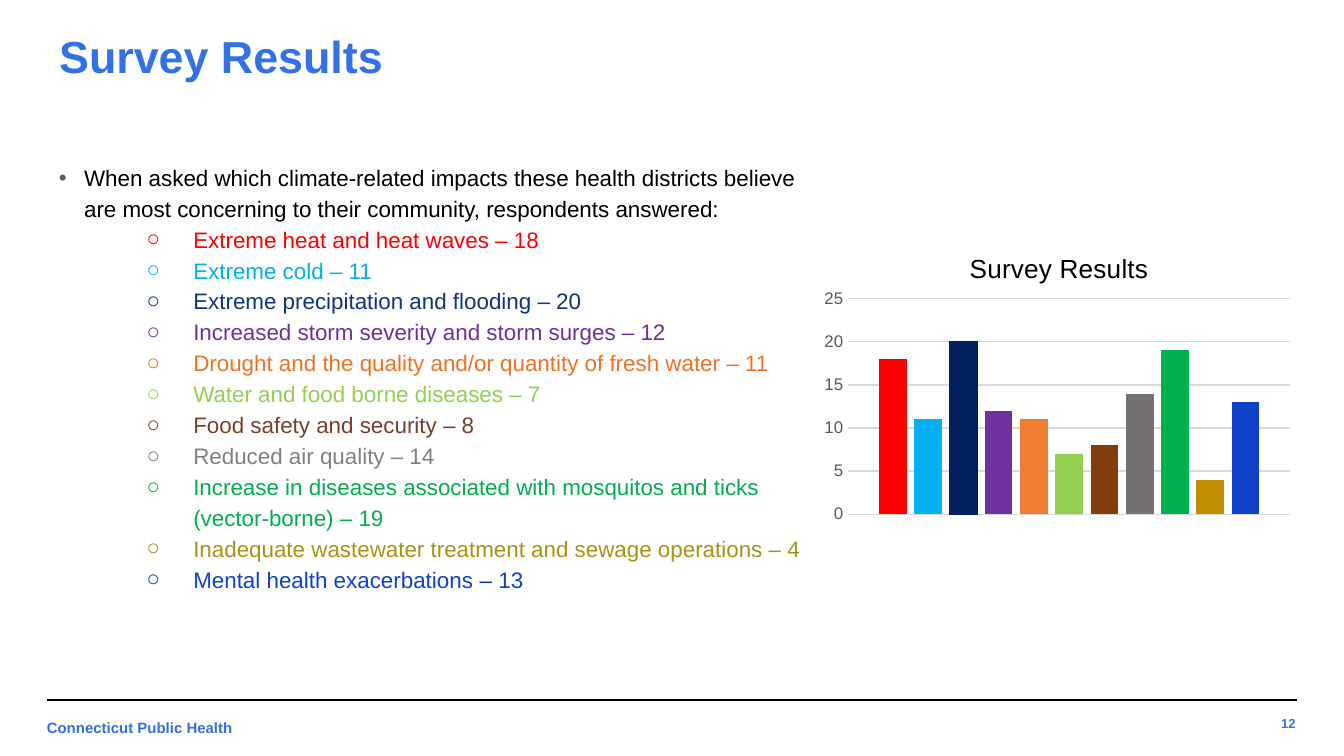
from dataclasses import dataclass

from lxml import etree
from pptx import Presentation
from pptx.chart.data import CategoryChartData
from pptx.dml.color import RGBColor
from pptx.enum.chart import XL_CHART_TYPE, XL_TICK_MARK
from pptx.enum.shapes import MSO_CONNECTOR
from pptx.enum.text import MSO_ANCHOR, MSO_AUTO_SIZE, PP_ALIGN
from pptx.oxml.ns import qn
from pptx.util import Pt

COLUMNS = XL_CHART_TYPE.COLUMN_CLUSTERED
NO_TICKS = XL_TICK_MARK.NONE
STRAIGHT = MSO_CONNECTOR.STRAIGHT
TOP, MIDDLE = MSO_ANCHOR.TOP, MSO_ANCHOR.MIDDLE
LEFT, RIGHT = PP_ALIGN.LEFT, PP_ALIGN.RIGHT
TITLE_ONLY_LAYOUT = 5

FONT = "Arial"
BLUE, BLACK, GRAY, GRID_GRAY = "3371E7", "000000", "595959", "D9D9D9"
INSET = 7.2


@dataclass
class Box:
    left: float
    top: float
    width: float
    height: float

    def lengths(self) -> tuple:
        return Pt(self.left), Pt(self.top), Pt(self.width), Pt(self.height)


@dataclass
class Impact:
    label: str
    count: int
    text_color: str
    bar_color: str
    dash_color: str = ""
    space: str = " "
    outlined: bool = False

    def runs(self) -> list:
        return [
            (self.label + self.space, self.text_color),
            ("– ", self.dash_color or self.text_color),
            (str(self.count), self.text_color),
        ]


QUESTION = (
    "When asked which climate-related impacts these health districts believe "
    "are most concerning to their community, respondents answered:"
)
IMPACTS = [
    Impact("Extreme heat and heat waves", 18, "FF0000", "FF0000"),
    Impact("Extreme cold", 11, "00B0F0", "00B0F0"),
    Impact("Extreme precipitation and flooding", 20, "0F357E", "002060", outlined=True),
    Impact("Increased storm severity and storm surges", 12, "7030A0", "7030A0"),
    Impact("Drought and the quality and/or quantity of fresh water", 11, "F17121", "ED7D31"),
    Impact("Water and food borne diseases", 7, "92D050", "92D050"),
    Impact("Food safety and security", 8, "7A3F2A", "833C0C"),
    Impact("Reduced air quality", 14, "808080", "757171"),
    Impact("Increase in diseases associated with mosquitos and ticks (vector-borne)",
           19, "00B050", "00B050", space=" "),
    Impact("Inadequate wastewater treatment and sewage operations", 4, "AD9113", "BF8F00"),
    Impact("Mental health exacerbations", 13, "0F42D2", "0E40C8",
           dash_color="003D9C", space=" "),
]


def rgb(color: str) -> RGBColor:
    return RGBColor.from_string(color)


def format_font(font, size: float, color: str, bold: bool = False) -> None:
    font.name, font.size, font.bold = FONT, Pt(size), bold
    font.color.rgb = rgb(color)


def prepare_frame(text_frame, anchor) -> None:
    text_frame.auto_size = MSO_AUTO_SIZE.NONE
    text_frame.word_wrap = True
    text_frame.vertical_anchor = anchor
    text_frame.margin_left = text_frame.margin_right = Pt(INSET)
    text_frame.margin_top = text_frame.margin_bottom = Pt(INSET)


def set_label(shape, text: str, size: float, anchor, alignment=LEFT) -> None:
    """Fill a shape with one bold blue line of text."""
    prepare_frame(shape.text_frame, anchor)
    shape.text_frame.text = text
    paragraph = shape.text_frame.paragraphs[0]
    paragraph.alignment = alignment
    format_font(paragraph.runs[0].font, size, BLUE, bold=True)


def add_bullet(paragraph, runs: list, mark: str, margin: float, hang: float,
               mark_color: str = "") -> None:
    paragraph.line_spacing = 1.15
    for text, color in runs:
        run = paragraph.add_run()
        run.text = text
        format_font(run.font, 12, color)
    properties = paragraph._p.get_or_add_pPr()
    properties.set("marL", str(Pt(margin)))
    properties.set("indent", str(-Pt(hang)))
    if mark_color:
        bullet_color = etree.SubElement(properties, qn("a:buClr"))
        etree.SubElement(bullet_color, qn("a:srgbClr"), val=mark_color)
    etree.SubElement(properties, qn("a:buFont"), typeface=FONT)
    etree.SubElement(properties, qn("a:buChar"), char=mark)


def add_answers(slide, box: Box) -> None:
    text_frame = slide.shapes.add_textbox(*box.lengths()).text_frame
    prepare_frame(text_frame, TOP)
    add_bullet(text_frame.paragraphs[0], [(QUESTION, BLACK)], "•", 13.5, 13.5, GRAY)
    for impact in IMPACTS:
        paragraph = text_frame.add_paragraph()
        paragraph.level = 1
        add_bullet(paragraph, impact.runs(), "○", 72, 25)


def place_chart_part(element, index: int, inner: bool = False, **fractions: float) -> None:
    """Give a chart title or plot area a fixed place, in fractions of the chart."""
    for old_layout in element.findall(qn("c:layout")):
        element.remove(old_layout)
    layout = etree.Element(qn("c:layout"))
    manual = etree.SubElement(layout, qn("c:manualLayout"))
    if inner:
        etree.SubElement(manual, qn("c:layoutTarget"), val="inner")
    for name in ("xMode", "yMode"):
        etree.SubElement(manual, qn(f"c:{name}"), val="edge")
    for name, value in fractions.items():
        etree.SubElement(manual, qn(f"c:{name}"), val=str(value))
    element.insert(index, layout)


def add_survey_chart(slide, box: Box) -> None:
    data = CategoryChartData()
    data.categories = ["1"]
    for number, impact in enumerate(IMPACTS, 1):
        data.add_series(f"Series {number}", [impact.count])
    chart = slide.shapes.add_chart(COLUMNS, *box.lengths(), data).chart
    format_font(chart.font, 10, BLACK)
    chart.has_legend = False

    title_frame = chart.chart_title.text_frame
    title_frame.text = "Survey Results"
    format_font(title_frame.paragraphs[0].runs[0].font, 14, BLACK)
    place_chart_part(chart.chart_title._element, 1, x=0.31, y=0.07)
    plot_area = chart._chartSpace.find(".//" + qn("c:plotArea"))
    place_chart_part(plot_area, 0, inner=True, x=0.07, y=0.24, w=0.91, h=0.71)

    chart.category_axis.visible = False
    axis = chart.value_axis
    axis.minimum_scale, axis.maximum_scale, axis.major_unit = 0, 25, 5
    axis.major_tick_mark = axis.minor_tick_mark = NO_TICKS
    axis.format.line.fill.background()
    format_font(axis.tick_labels.font, 9, GRAY)
    grid_line = axis.major_gridlines.format.line
    grid_line.color.rgb = rgb(GRID_GRAY)
    grid_line.width = Pt(0.75)

    plot = chart.plots[0]
    plot.gap_width, plot.overlap, plot.vary_by_categories = 219, -27, False
    for series, impact in zip(plot.series, IMPACTS):
        series.format.fill.solid()
        series.format.fill.fore_color.rgb = rgb(impact.bar_color)
        if impact.outlined:
            series.format.line.color.rgb = rgb(impact.bar_color)
            series.format.line.width = Pt(0.75)


def add_footer(slide) -> None:
    rule = slide.shapes.add_connector(STRAIGHT, Pt(25.2), Pt(375.1), Pt(694.8), Pt(375.1))
    rule.line.color.rgb = rgb(BLACK)
    rule.line.width = Pt(0.75)
    etree.SubElement(rule._element.spPr, qn("a:effectLst"))
    owner = slide.shapes.add_textbox(*Box(18, 378, 236, 24.5).lengths())
    set_label(owner, "Connecticut Public Health", 8, TOP)
    page = slide.shapes.add_textbox(*Box(658, 378.7, 43.2, 18).lengths())
    set_label(page, "12", 7, MIDDLE, RIGHT)


def main() -> None:
    presentation = Presentation()
    presentation.slide_width, presentation.slide_height = Pt(720), Pt(405)
    slide = presentation.slides.add_slide(presentation.slide_layouts[TITLE_ONLY_LAYOUT])
    title = slide.shapes.title
    title.left, title.top, title.width, title.height = Box(24.5, 18, 671, 24).lengths()
    set_label(title, "Survey Results", 24, MIDDLE)
    add_footer(slide)
    add_answers(slide, Box(24.5, 78.5, 412, 247.5))
    add_survey_chart(slide, Box(436.3, 121, 260, 162.7))
    presentation.save("out.pptx")


if __name__ == "__main__":
    main()
